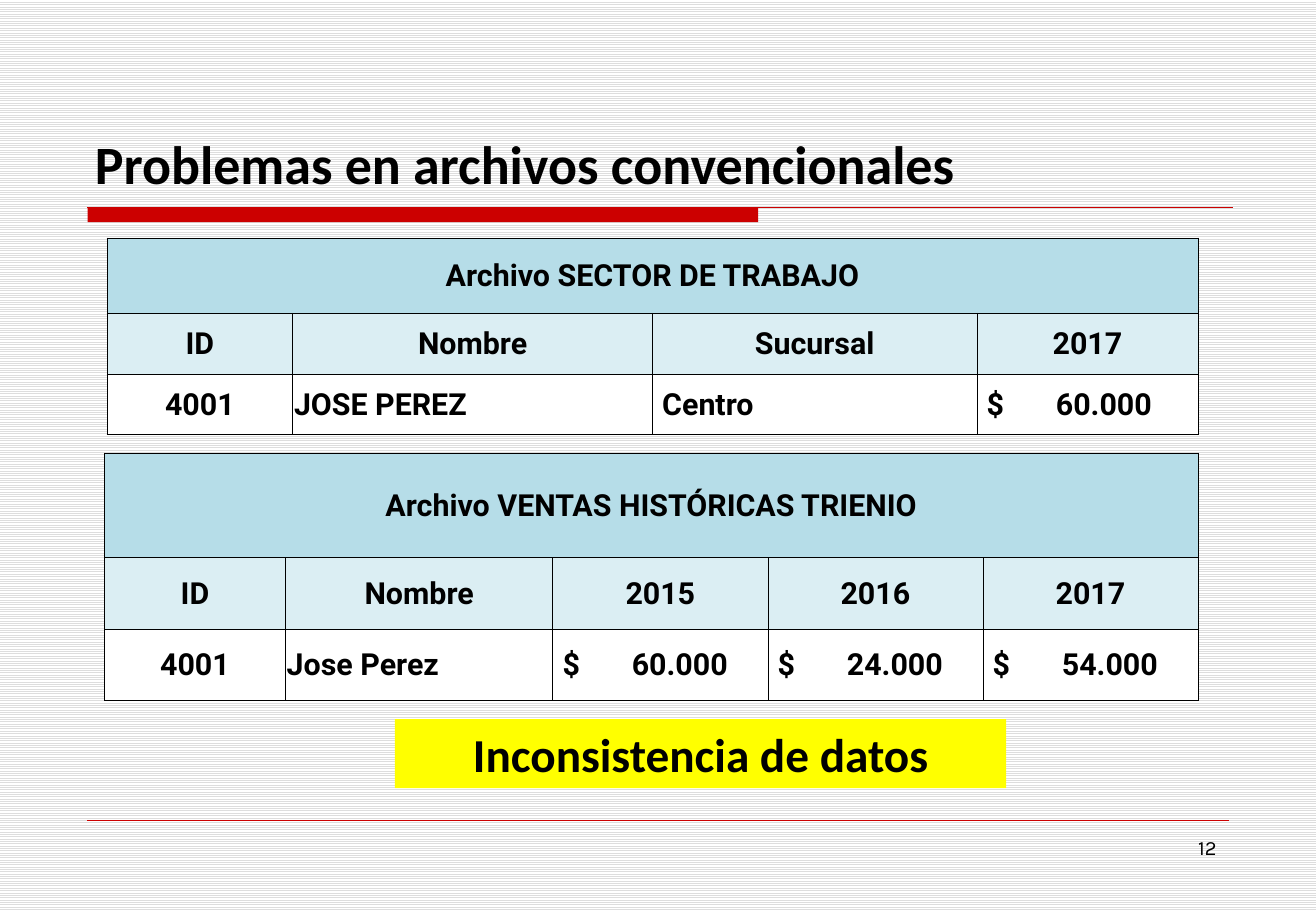
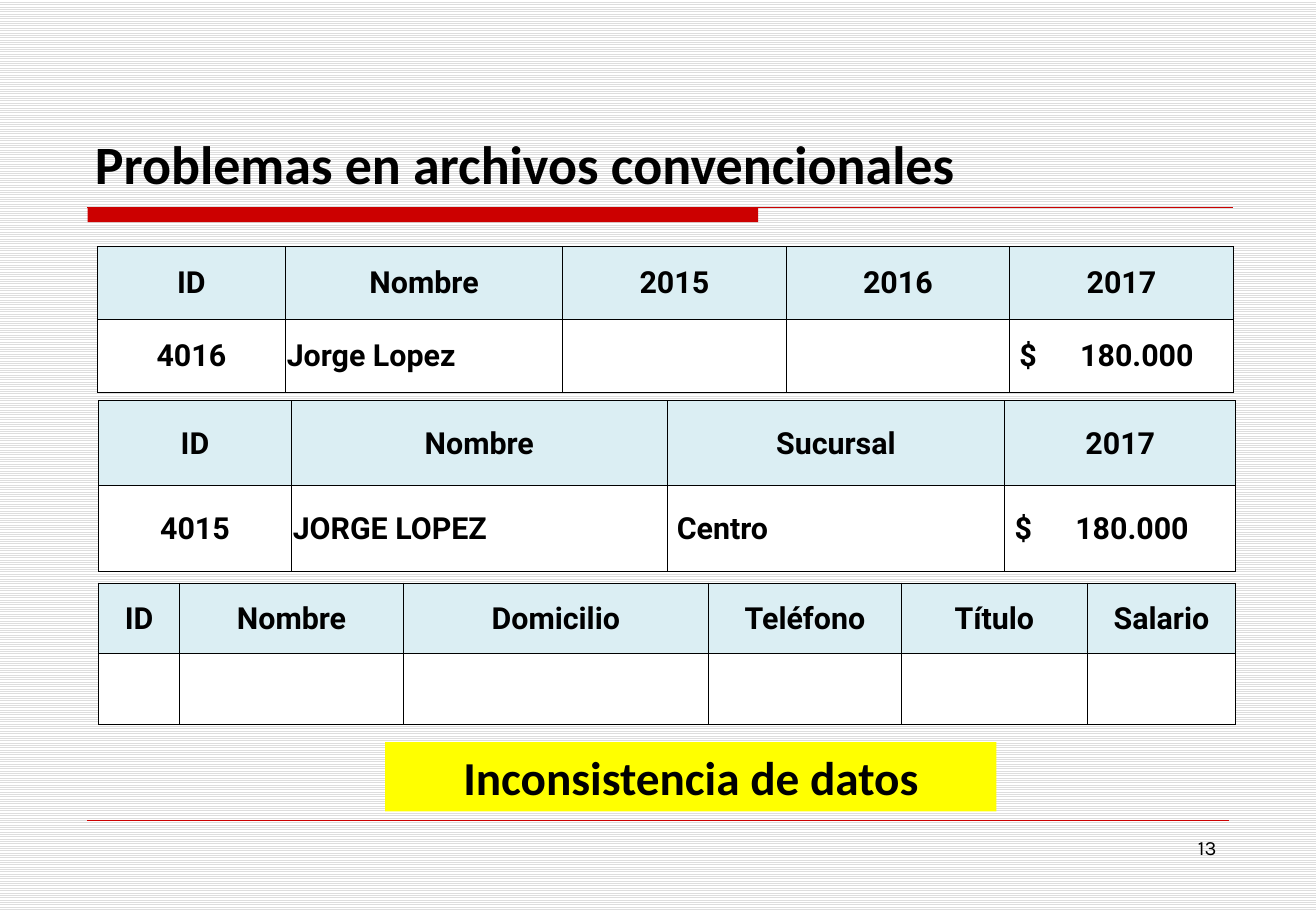
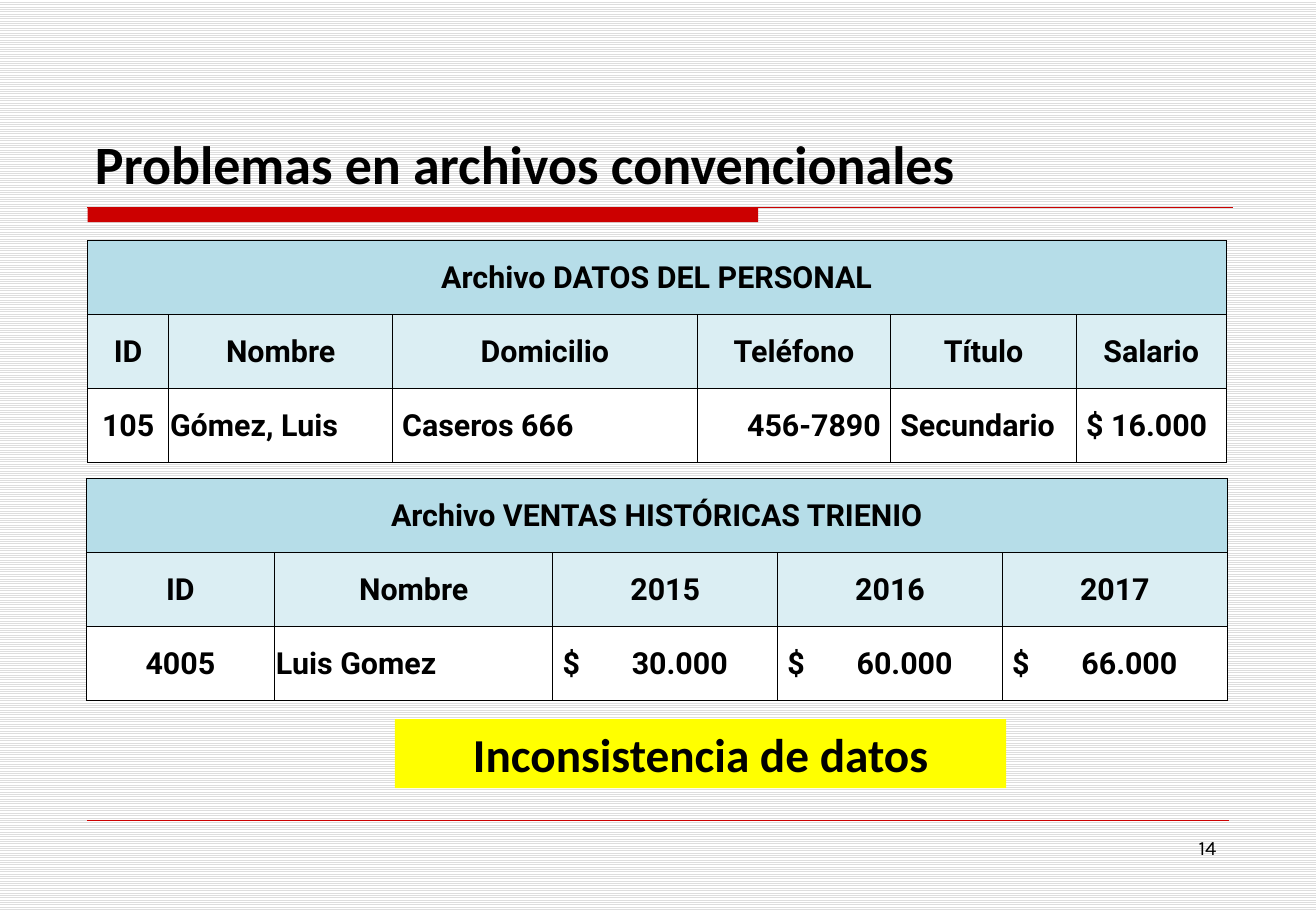
from lxml import etree
from pptx import Presentation
from pptx.dml.color import RGBColor
from pptx.enum.dml import MSO_PATTERN
from pptx.enum.shapes import MSO_CONNECTOR, MSO_SHAPE
from pptx.enum.text import MSO_ANCHOR, MSO_AUTO_SIZE, PP_ALIGN
from pptx.oxml.ns import qn
from pptx.util import Inches, Pt

LEFT, CENTER, RIGHT = PP_ALIGN.LEFT, PP_ALIGN.CENTER, PP_ALIGN.RIGHT
MIDDLE, BOTTOM = MSO_ANCHOR.MIDDLE, MSO_ANCHOR.BOTTOM
STRIPES = MSO_PATTERN.LIGHT_HORIZONTAL
RECTANGLE, STRAIGHT = MSO_SHAPE.RECTANGLE, MSO_CONNECTOR.STRAIGHT
NO_AUTOFIT = MSO_AUTO_SIZE.NONE

COLORS = {
    "text": "000000",
    "paper": "FFFFFF",
    "stripe": "DDDDDD",
    "accent": "CC0000",
    "callout": "FFFF00",
    "table_title": "B6DDE8",
    "table_head": "DBEEF3",
}
TITLE = "Problemas en archivos convencionales"
CALLOUT = "Inconsistencia de datos"
FIRST_NUMBER = 12
CELL_INSET, CELL_INDENT = 0.01, 0.08

SALES_HEAD = ["ID", "Nombre", "2015", "2016", "2017"]
SECTOR_HEAD = ["ID", "Nombre", "Sucursal", "2017"]
STAFF_HEAD = ["ID", "Nombre", "Domicilio", "Teléfono", "Título", "Salario"]
SALES_TITLE = "Archivo VENTAS HISTÓRICAS TRIENIO"

# Each slide: callout position and its tables
SLIDES = [
    {"callout": (3.25, 5.92), "tables": [
        {"at": (0.88, 1.96), "title": "Archivo SECTOR DE TRABAJO", "head": SECTOR_HEAD,
         "row": ["4001", "JOSE PEREZ", "Centro", "$\t60.000"],
         "widths": [1.53, 2.96, 2.67, 1.82], "heights": [0.62, 0.5, 0.5]},
        {"at": (0.86, 3.73), "title": SALES_TITLE, "head": SALES_HEAD,
         "row": ["4001", "Jose Perez", "$\t60.000", "$\t24.000", "$\t54.000"],
         "widths": [1.49, 2.2] + [1.77] * 3, "heights": [0.86, 0.59, 0.59]},
    ]},
    {"callout": (3.17, 6.11), "tables": [
        {"at": (0.8, 2.03), "head": SALES_HEAD,
         "row": ["4016", "Jorge Lopez", "", "", "$\t180.000"],
         "widths": [1.55, 2.28] + [1.84] * 3, "heights": [0.6] * 2},
        {"at": (0.81, 3.3), "head": SECTOR_HEAD,
         "row": ["4015", "JORGE LOPEZ", "Centro", "$\t180.000"],
         "widths": [1.59, 3.09, 2.78, 1.9], "heights": [0.7] * 2},
        {"at": (0.81, 4.8), "head": STAFF_HEAD, "row": [""] * 6,
         "widths": [0.67, 1.84, 2.51, 1.59, 1.53, 1.22], "heights": [0.58] * 2},
    ]},
    {"callout": (3.25, 5.92), "tables": [
        {"at": (0.72, 1.98), "title": "Archivo DATOS DEL PERSONAL", "head": STAFF_HEAD,
         "row": ["105", "Gómez, Luis", "Caseros 666", "456-7890", "Secundario", "$ 16.000"],
         "widths": [0.67, 1.84, 2.51, 1.59, 1.53, 1.23], "heights": [0.61] * 3},
        {"at": (0.71, 3.94), "title": SALES_TITLE, "head": SALES_HEAD,
         "row": ["4005", "Luis Gomez", "$\t30.000", "$\t60.000", "$\t66.000"],
         "widths": [1.55, 2.29] + [1.85] * 3, "heights": [0.61] * 3},
    ]},
]


def rgb(name):
    return RGBColor.from_string(COLORS[name])


def write(frame, text, font="Calibri", size=18, bold=True, align=LEFT):
    """Put one formatted paragraph into a text frame and return it."""
    para = frame.paragraphs[0]
    para.alignment = align
    span = para.add_run()
    span.text = text
    span.font.name = font
    span.font.size = Pt(size)
    span.font.bold = bold
    span.font.color.rgb = rgb("text")
    return para


def add_box(page, left, top, width, height, color):
    box = page.shapes.add_shape(RECTANGLE, Inches(left), Inches(top),
                                Inches(width), Inches(height))
    box.shadow.inherit = False
    box.fill.solid()
    box.fill.fore_color.rgb = rgb(color)
    box.line.fill.background()
    return box


def add_rule(page, left, right, top, weight):
    rule = page.shapes.add_connector(STRAIGHT, Inches(left), Inches(top),
                                     Inches(right), Inches(top))
    rule.line.color.rgb = rgb("accent")
    rule.line.width = Pt(weight)
    etree.SubElement(rule._element.spPr, qn("a:effectLst"))


def add_title(page):
    title = page.shapes.title
    title.left, title.top = Inches(0.68), Inches(0.33)
    title.width, title.height = Inches(9.48), Inches(1.33)
    title.text_frame.auto_size = NO_AUTOFIT
    title.text_frame.vertical_anchor = BOTTOM
    write(title.text_frame, TITLE, size=32)


def add_number(page, number):
    box = page.shapes.add_textbox(Inches(7.76), Inches(6.83), Inches(2.35), Inches(0.52))
    box.text_frame.word_wrap = True
    write(box.text_frame, str(number), font="Karla", size=12, bold=False, align=RIGHT)


def add_callout(page, left, top):
    box = add_box(page, left, top, 5.03, 0.57, "callout")
    box.text_frame.word_wrap = True
    write(box.text_frame, CALLOUT, size=28, align=CENTER)


def set_borders(cell):
    properties = cell._tc.get_or_add_tcPr()
    for side in ("a:lnL", "a:lnR", "a:lnT", "a:lnB"):
        line = etree.SubElement(properties, qn(side), w=str(Pt(0.5)))
        fill = etree.SubElement(line, qn("a:solidFill"))
        etree.SubElement(fill, qn("a:srgbClr"), val=COLORS["text"])


def set_tab(para, position):
    tabs = etree.SubElement(para._p.get_or_add_pPr(), qn("a:tabLst"))
    etree.SubElement(tabs, qn("a:tab"), pos=str(Inches(position)), algn="l")


def fill_cell(cell, text, color, align=CENTER, indent=CELL_INSET):
    set_borders(cell)
    cell.fill.solid()
    cell.fill.fore_color.rgb = rgb(color)
    cell.vertical_anchor = MIDDLE
    cell.margin_left = Inches(indent)
    cell.margin_right = Inches(indent if align == RIGHT else CELL_INSET)
    cell.margin_top, cell.margin_bottom = Inches(CELL_INSET), 0
    if text:
        para = write(cell.text_frame, text, font="Roboto", align=align)
        if "\t" in text:
            # Longer amounts start further left
            set_tab(para, 0.57 if len(text) < 9 else 0.5)


def data_format(column, heading):
    """Alignment and indent of a data cell."""
    if column == 0:
        return {"align": CENTER}
    if column == 1:
        return {"align": LEFT}
    return {"align": RIGHT if heading == "Teléfono" else LEFT, "indent": CELL_INDENT}


def add_data_table(page, at, head, row, widths, heights, title=None):
    frame = page.shapes.add_table(len(heights), len(widths), Inches(at[0]), Inches(at[1]),
                                  Inches(sum(widths)), Inches(sum(heights)))
    table = frame.table
    table.first_row = table.horz_banding = False
    for column, width in zip(table.columns, widths):
        column.width = Inches(width)
    for line, height in zip(table.rows, heights):
        line.height = Inches(height)

    # Title across all columns, then headings and data
    last = len(heights) - 1
    if title:
        for column in range(len(widths)):
            fill_cell(table.cell(0, column), "" if column else title, "table_title")
        table.cell(0, 0).merge(table.cell(0, len(widths) - 1))
    for column, (heading, value) in enumerate(zip(head, row)):
        fill_cell(table.cell(last - 1, column), heading, "table_head")
        fill_cell(table.cell(last, column), value, "paper", **data_format(column, heading))


def add_page(deck, number):
    """Slide with the shared title, bands and number."""
    page = deck.slides.add_slide(deck.slide_layouts[5])
    add_box(page, 0.72, 1.71, 5.52, 0.12, "accent")
    add_rule(page, 0.72, 10.15, 1.71, 0.75)
    add_rule(page, 0.72, 10.11, 6.75, 0.25)
    add_title(page)
    add_number(page, number)
    return page


def main():
    deck = Presentation()
    deck.slide_width, deck.slide_height = Inches(10.83), Inches(7.5)
    backdrop = deck.slide_master.background.fill
    backdrop.patterned()
    backdrop.pattern = STRIPES
    backdrop.fore_color.rgb = rgb("stripe")
    backdrop.back_color.rgb = rgb("paper")

    for number, content in enumerate(SLIDES, FIRST_NUMBER):
        page = add_page(deck, number)
        add_callout(page, *content["callout"])
        for table in content["tables"]:
            add_data_table(page, **table)
    deck.save("out.pptx")


if __name__ == "__main__":
    main()
